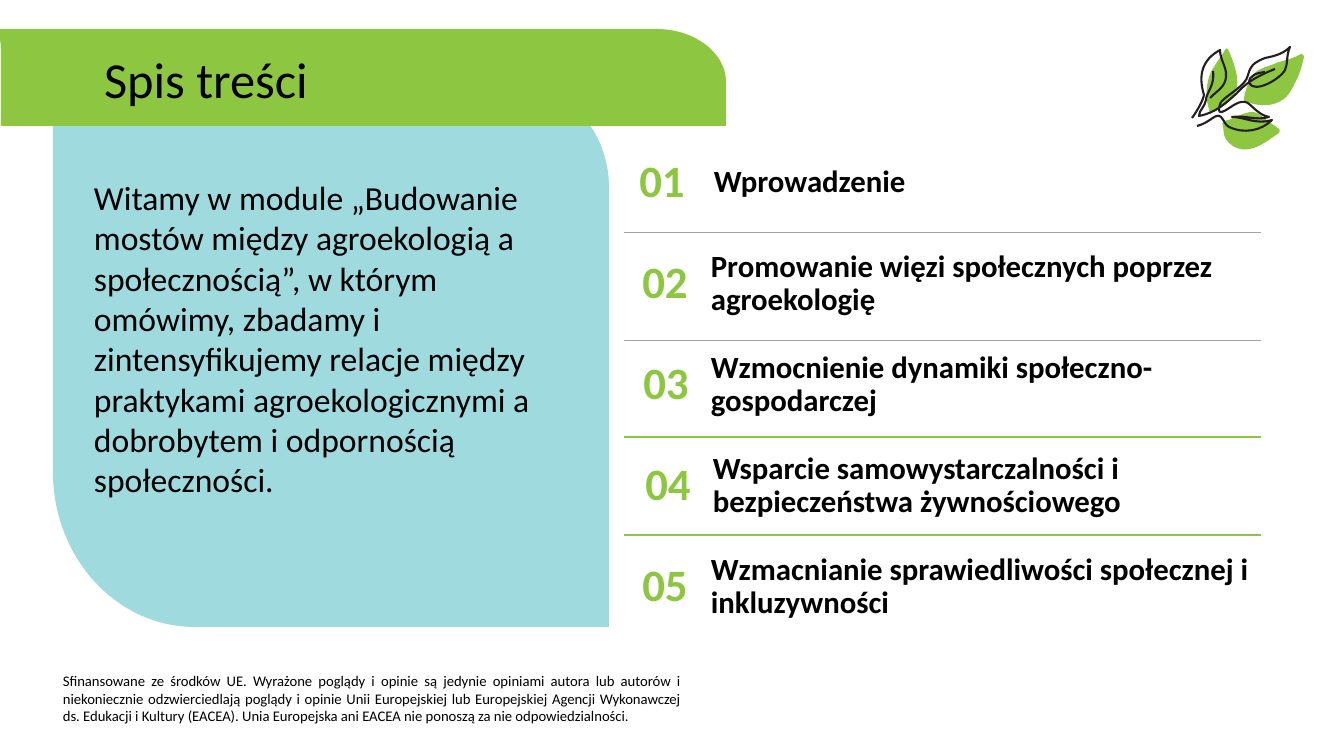
import math

import pptx
import pptx.util
import pptx.dml.color
import pptx.enum.shapes
import pptx.enum.text
import pptx.oxml.ns
from lxml import etree

PX = 9071  # EMU in one px
GREEN, BLUE, GRAY, INK, BLACK = "8DC641", "9FDADF", "A5A5A5", "231F20", "000000"
hue = pptx.dml.color.RGBColor.from_string
qn = pptx.oxml.ns.qn
ALIGN = pptx.enum.text.PP_ALIGN
ANCHOR = pptx.enum.text.MSO_ANCHOR
FIT = pptx.enum.text.MSO_AUTO_SIZE

deck = pptx.Presentation()
deck.slide_width, deck.slide_height = 1344 * PX, 756 * PX
slide = deck.slides.add_slide(deck.slide_layouts[5])
shapes = slide.shapes


def draw(home, parts, fill=None, angle=0):
    """Draw outlines, each a start and steps, in a frame turned by angle.

    A step of 2 numbers is a line, of 6 a Bézier curve.
    With a fill the outline is closed; without one it is an ink stroke.
    """
    turn = complex(math.cos(math.radians(angle)), math.sin(math.radians(angle)))
    pen, curves = None, []
    for start, steps in parts:
        spot = complex(*start) * PX / turn
        if pen:
            pen.move_to(spot.real, spot.imag)
        else:
            pen = home.build_freeform(spot.real, spot.imag)
        for step in steps:
            spots = [complex(*step[n:n + 2]) * PX / turn
                     for n in range(0, len(step), 2)]
            pen.add_line_segments([(spots[-1].real, spots[-1].imag)], close=False)
            curves.append(spots[:-1])
        if fill:
            pen.add_line_segments([], close=True)
    shape = pen.convert_to_shape()
    left, top = shape.left, shape.top
    for node, grips in zip(list(shape.element.iter(qn("a:lnTo"))), curves):
        if grips:
            curve = etree.Element(qn("a:cubicBezTo"))
            for grip in grips:
                etree.SubElement(curve, qn("a:pt"), x=str(round(grip.real - left)),
                                 y=str(round(grip.imag - top)))
            node.getparent().replace(node, curve)
            curve.append(node[0])
    half = complex(shape.width, shape.height) / 2
    spot = (complex(left, top) + half) * turn - half
    shape.left, shape.top = round(spot.real), round(spot.imag)
    shape.rotation = angle
    shape.shadow.inherit = False
    if fill:
        shape.fill.solid()
        shape.fill.fore_color.rgb = hue(fill)
        shape.line.fill.background()
    else:
        shape.fill.background()
        shape.line.color.rgb = hue(INK)
        shape.line.width = pptx.util.Pt(1.5)


def write(box, text, size, color=BLACK, bold=False, align=ALIGN.LEFT,
          anchor=ANCHOR.MIDDLE, space=0.9, fit=FIT.NONE):
    frame = box.text_frame
    frame.word_wrap = True
    frame.auto_size = fit
    frame.vertical_anchor = anchor
    para = frame.paragraphs[0]
    para.alignment = align
    para.line_spacing = space
    run = para.add_run()
    run.text = text
    run.font.name = "Calibri"
    run.font.size = pptx.util.Pt(size)
    run.font.bold = bold
    run.font.color.rgb = hue(color)
    return para


# Card and title banner
card = ((609, 627), [(195, 627), (116, 627, 53, 557, 53, 472), (53, 83), (512, 83),
                     (566, 83, 609, 130, 609, 187)])
banner = ((-2, 29), [(656, 29), (695, 29, 726, 53, 726, 82), (726, 126), (1, 126),
                     (1, 48), (1, 44, 0, 41, 0, 37)])
draw(shapes, [card], BLUE)
draw(shapes, [banner], GREEN)

title = shapes.title
title.left, title.top, title.width, title.height = 94 * PX, 42 * PX, 423 * PX, 80 * PX
write(title, "Spis treści", 36)
title.element.getparent().append(title.element)

# Rules between the topics
for y, color, width in [(232, GRAY, 0.5), (340, GRAY, 0.5),
                        (437, GREEN, 1), (535, GREEN, 1)]:
    rule = shapes.add_connector(pptx.enum.shapes.MSO_CONNECTOR.STRAIGHT,
                                1261 * PX, y * PX, 624 * PX, y * PX)
    rule.line.color.rgb = hue(color)
    rule.line.width = pptx.util.Pt(width)
    etree.SubElement(rule.element.spPr, qn("a:effectLst"))

# Topics: number left, text left, text width, text
topics = [
    (623, 704, 492, "Wprowadzenie"),
    (626, 701, 643, "Promowanie więzi społecznych poprzez agroekologię"),
    (627, 701, 576, "Wzmocnienie dynamiki społeczno-gospodarczej"),
    (629, 703, 603, "Wsparcie samowystarczalności i bezpieczeństwa żywnościowego"),
    (626, 701, 603, "Wzmacnianie sprawiedliwości społecznej i inkluzywności"),
]
for i, (left, start, width, text) in enumerate(topics):
    top = (145 + 101 * i) * PX
    box = shapes.add_textbox(left * PX, top, 78 * PX, 76 * PX)
    write(box, f"{i + 1:02}", 32, GREEN, True, ALIGN.CENTER)
    box = shapes.add_textbox(start * PX, top, width * PX, 76 * PX)
    write(box, text, 22, bold=True)

intro = write(
    shapes.add_textbox(59 * PX, 172 * PX, 520 * PX, 472 * PX),
    "Witamy w module „Budowanie mostów między agroekologią a społecznością”, "
    "w którym omówimy, zbadamy i zintensyfikujemy relacje między praktykami "
    "agroekologicznymi a dobrobytem i odpornością społeczności.",
    24, anchor=ANCHOR.TOP, space=1.0)
props = intro._p.get_or_add_pPr()
props.set("marL", str(25 * PX))
props.set("indent", "0")

write(
    shapes.add_textbox(53 * PX, 667 * PX, 638 * PX, 67 * PX),
    "Sfinansowane ze środków UE. Wyrażone poglądy i opinie są jedynie opiniami "
    "autora lub autorów i niekoniecznie odzwierciedlają poglądy i opinie Unii "
    "Europejskiej lub Europejskiej Agencji Wykonawczej ds. Edukacji i Kultury "
    "(EACEA). Unia Europejska ani EACEA nie ponoszą za nie odpowiedzialności.",
    10.5, align=ALIGN.JUSTIFY, anchor=ANCHOR.TOP, space=1.0,
    fit=FIT.SHAPE_TO_FIT_TEXT)

# Sprig: green leaves, then ink strokes
TILT = 62.2
sprig = shapes.add_group_shape().shapes
leaves = [
    ((1215, 111), [
        (1225, 106, 1235, 98, 1237, 87), (1239, 75, 1233, 61, 1228, 49),
        (1228, 48, 1225, 48, 1225, 50), (1222, 56, 1218, 60, 1214, 67),
        (1211, 71, 1209, 76, 1208, 81), (1206, 90, 1206, 100, 1209, 109),
        (1208, 110, 1210, 113, 1212, 112)]),
    ((1284, 99), [
        (1290, 94, 1293, 87, 1296, 81), (1300, 73, 1302, 66, 1304, 57),
        (1304, 55, 1303, 54, 1301, 54), (1294, 58, 1287, 60, 1279, 62),
        (1273, 65, 1267, 66, 1261, 69), (1256, 71, 1252, 75, 1250, 80),
        (1247, 86, 1245, 92, 1244, 98), (1243, 100, 1244, 101, 1245, 101),
        (1258, 107, 1273, 107, 1284, 99)]),
    ((1279, 133), [
        (1280, 132, 1280, 130, 1279, 129), (1274, 125, 1269, 122, 1264, 118),
        (1260, 115, 1257, 112, 1252, 112), (1248, 112, 1244, 114, 1240, 115),
        (1236, 117, 1232, 118, 1229, 120), (1227, 120, 1224, 121, 1223, 122),
        (1222, 123, 1222, 125, 1223, 126), (1223, 129, 1224, 133, 1224, 135),
        (1226, 141, 1231, 146, 1237, 148), (1252, 154, 1267, 141, 1279, 133)]),
]
for leaf in leaves:
    draw(sprig, [leaf], GREEN, TILT)

strokes = [
    ((1192, 118), [
        (1198, 110, 1203, 100, 1204, 95), (1198, 75, 1202, 60, 1220, 50),
        (1220, 60, 1227, 67, 1226, 77), (1225, 87, 1218, 90, 1210, 98)]),
    ((1213, 71), [
        (1215, 86, 1206, 93, 1206, 100), (1205, 107, 1199, 110, 1199, 116),
        (1215, 113, 1225, 104, 1237, 93), (1245, 84, 1255, 77, 1275, 69)]),
    ((1221, 102), [
        (1228, 94, 1246, 86, 1248, 75), (1251, 63, 1258, 61, 1265, 58),
        (1275, 56, 1283, 54, 1290, 47), (1286, 56, 1288, 64, 1285, 70),
        (1280, 79, 1255, 94, 1249, 83), (1249, 75, 1257, 73, 1265, 72)]),
    ((1197, 126), [
        (1210, 123, 1216, 112, 1221, 117), (1224, 120, 1225, 125, 1229, 127),
        (1244, 134, 1261, 131, 1272, 120), (1255, 125, 1245, 117, 1232, 117),
        (1245, 115, 1257, 121, 1269, 117), (1257, 115, 1250, 102, 1245, 102),
        (1236, 100, 1226, 113, 1220, 112), (1218, 110, 1219, 107, 1221, 102)]),
]
draw(sprig, strokes, angle=TILT)

deck.save("out.pptx")
